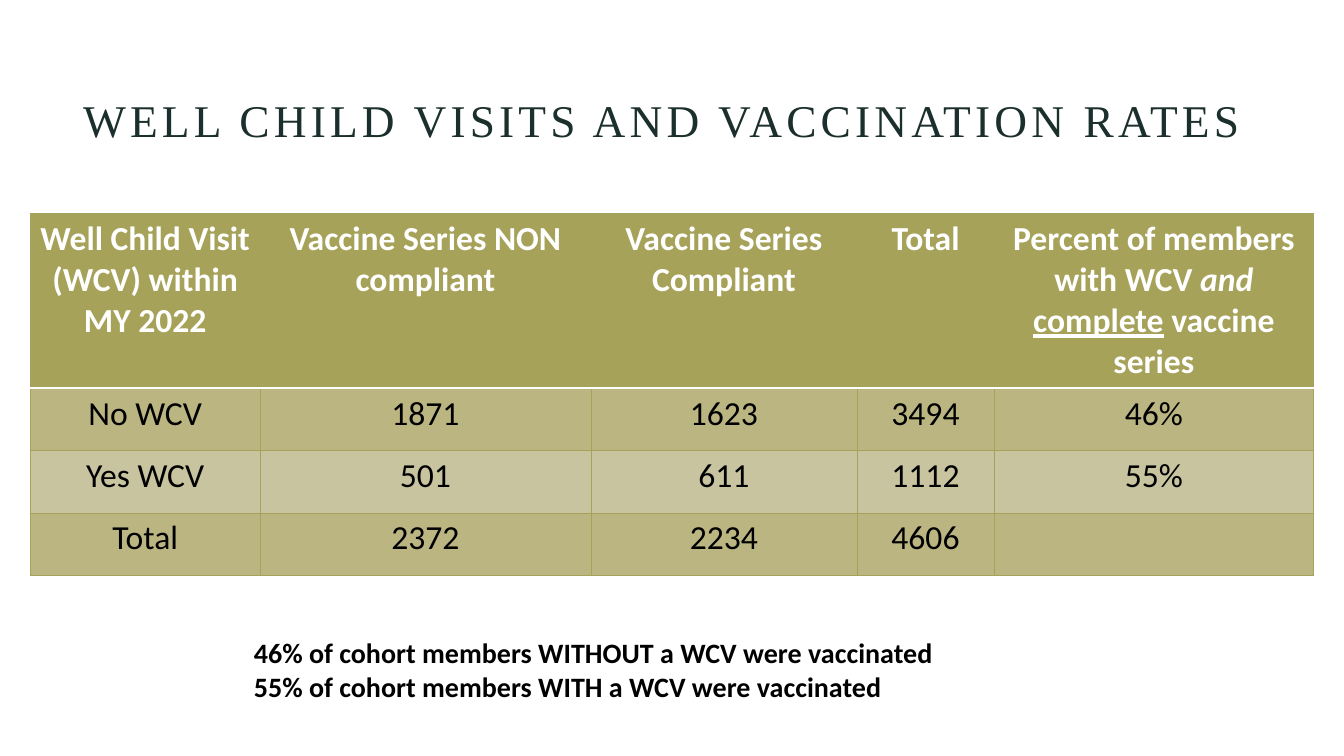
"""Build the slide on well child visits and vaccination rates."""
import dataclasses

import lxml.etree
import pptx
import pptx.dml.color
import pptx.enum.text
import pptx.oxml.ns
import pptx.util

Inches = pptx.util.Inches
Pt = pptx.util.Pt
Align = pptx.enum.text.PP_ALIGN
Anchor = pptx.enum.text.MSO_ANCHOR
AutoSize = pptx.enum.text.MSO_AUTO_SIZE


@dataclasses.dataclass(frozen=True)
class Theme:
    """Colours, fonts and type sizes of the slide."""
    olive: str = "A7A259"
    dark_band: str = "BAB581"
    light_band: str = "C8C4A0"
    white: str = "FFFFFF"
    black: str = "000000"
    heading: str = "1B2F2C"
    title_font: str = "Times New Roman"
    body_font: str = "Calibri"
    title_size: float = 32.4
    table_size: float = 24
    note_size: float = 20
    title_spacing: int = 300


class SlideBuilder:
    """Holds the theme and the current slide, and adds elements to it."""

    def __init__(self, slide, theme):
        """Keep the slide and its theme."""
        self.slide = slide
        self.theme = theme

    def add_spans(self, para, pieces, color, **formats):
        """Add runs, each a text with its own format values, to a paragraph."""
        for text, own in pieces:
            span = para.add_run()
            span.text = text
            span.font.color.rgb = pptx.dml.color.RGBColor.from_string(color)
            for name, value in {**formats, **own}.items():
                setattr(span.font, name, value)

    def title(self, text, left, top, width, height):
        """Place and format the title placeholder."""
        theme = self.theme
        box = self.slide.shapes.title
        place = {"left": left, "top": top, "width": width, "height": height}
        for name, value in place.items():
            setattr(box, name, Inches(value))
        frame = box.text_frame
        settings = {"word_wrap": True, "auto_size": AutoSize.NONE,
                    "vertical_anchor": Anchor.BOTTOM}
        for name, value in settings.items():
            setattr(frame, name, value)
        para = frame.paragraphs[0]
        para.alignment = Align.CENTER
        para.line_spacing = 0.9
        self.add_spans(para, [(text, {})], theme.heading,
                       name=theme.title_font, size=Pt(theme.title_size))
        para.runs[0].font._element.set("spc", str(theme.title_spacing))

    def border(self, cell, side, color, points):
        """Draw one side of a cell."""
        qn = pptx.oxml.ns.qn
        line = lxml.etree.SubElement(cell._tc.get_or_add_tcPr(),
                                     qn(f"a:ln{side}"), w=str(Pt(points)))
        fill = lxml.etree.SubElement(line, qn("a:solidFill"))
        lxml.etree.SubElement(fill, qn("a:srgbClr"), val=color)

    def cell(self, cell, pieces, row):
        """Fill, border and letter one table cell."""
        theme = self.theme
        header = row == 0
        white_sides = {0: "B", 1: "T"}
        for side in "LRTB":
            if white_sides.get(row) == side:
                self.border(cell, side, theme.white, 1)
            else:
                self.border(cell, side, theme.olive, 0.5)
        band = theme.dark_band if row % 2 else theme.light_band
        cell.fill.solid()
        cell.fill.fore_color.rgb = pptx.dml.color.RGBColor.from_string(
            theme.olive if header else band)
        para = cell.text_frame.paragraphs[0]
        para.alignment = Align.CENTER
        self.add_spans(para, pieces, theme.white if header else theme.black,
                       name=theme.body_font, size=Pt(theme.table_size),
                       bold=header)

    def table(self, rows, left, top, widths, heights):
        """Add a table from rows of cells, each a list of text pieces."""
        frame = self.slide.shapes.add_table(
            len(heights), len(widths), Inches(left), Inches(top),
            Inches(sum(widths)), Inches(sum(heights)))
        table = frame.table
        table.horz_banding = False
        for column, width in zip(table.columns, widths):
            column.width = Inches(width)
        for line, height in zip(table.rows, heights):
            line.height = Inches(height)
        for row, values in enumerate(rows):
            for column, pieces in enumerate(values):
                self.cell(table.cell(row, column), pieces, row)

    def note(self, lines, left, top, width, height):
        """Add a text box with one bold paragraph for each line."""
        theme = self.theme
        box = self.slide.shapes.add_textbox(
            Inches(left), Inches(top), Inches(width), Inches(height))
        frame = box.text_frame
        frame.word_wrap = True
        frame.auto_size = AutoSize.SHAPE_TO_FIT_TEXT
        for index, text in enumerate(lines):
            para = frame.add_paragraph() if index else frame.paragraphs[0]
            self.add_spans(para, [(text, {})], theme.black,
                           name=theme.body_font, size=Pt(theme.note_size),
                           bold=True)


def main():
    """Build and save the deck."""
    deck = pptx.Presentation()
    deck.slide_width = Inches(13.33)
    deck.slide_height = Inches(7.5)
    page = SlideBuilder(deck.slides.add_slide(deck.slide_layouts[5]), Theme())

    page.title("WELL CHILD VISITS AND VACCINATION RATES", 0.68, 0.45, 11.77, 1.06)

    headings = ["Well Child Visit (WCV) within MY 2022",
                "Vaccine Series NON compliant", "Vaccine Series Compliant", "Total"]
    percent_heading = [("Percent of members with WCV ", {}),
                       ("and ", {"italic": True}),
                       ("complete", {"underline": True}),
                       (" vaccine series", {})]
    counts = [["No WCV", "1871", "1623", "3494", "46%"],
              ["Yes WCV", "501", "611", "1112", "55%"],
              ["Total", "2372", "2234", "4606"]]
    rows = [[[(text, {})] for text in values] for values in [headings, *counts]]
    rows[0].append(percent_heading)
    rows[-1].append([])
    page.table(rows, 0.3, 2.12, [2.28, 3.28, 2.64, 1.36, 3.17],
               [1.73] + [0.62] * len(counts))

    page.note(["46% of cohort members WITHOUT a WCV were vaccinated",
               "55% of cohort members WITH a WCV were vaccinated"],
              2.42, 6.26, 8.7, 0.77)
    deck.save("out.pptx")


if __name__ == "__main__":
    main()
